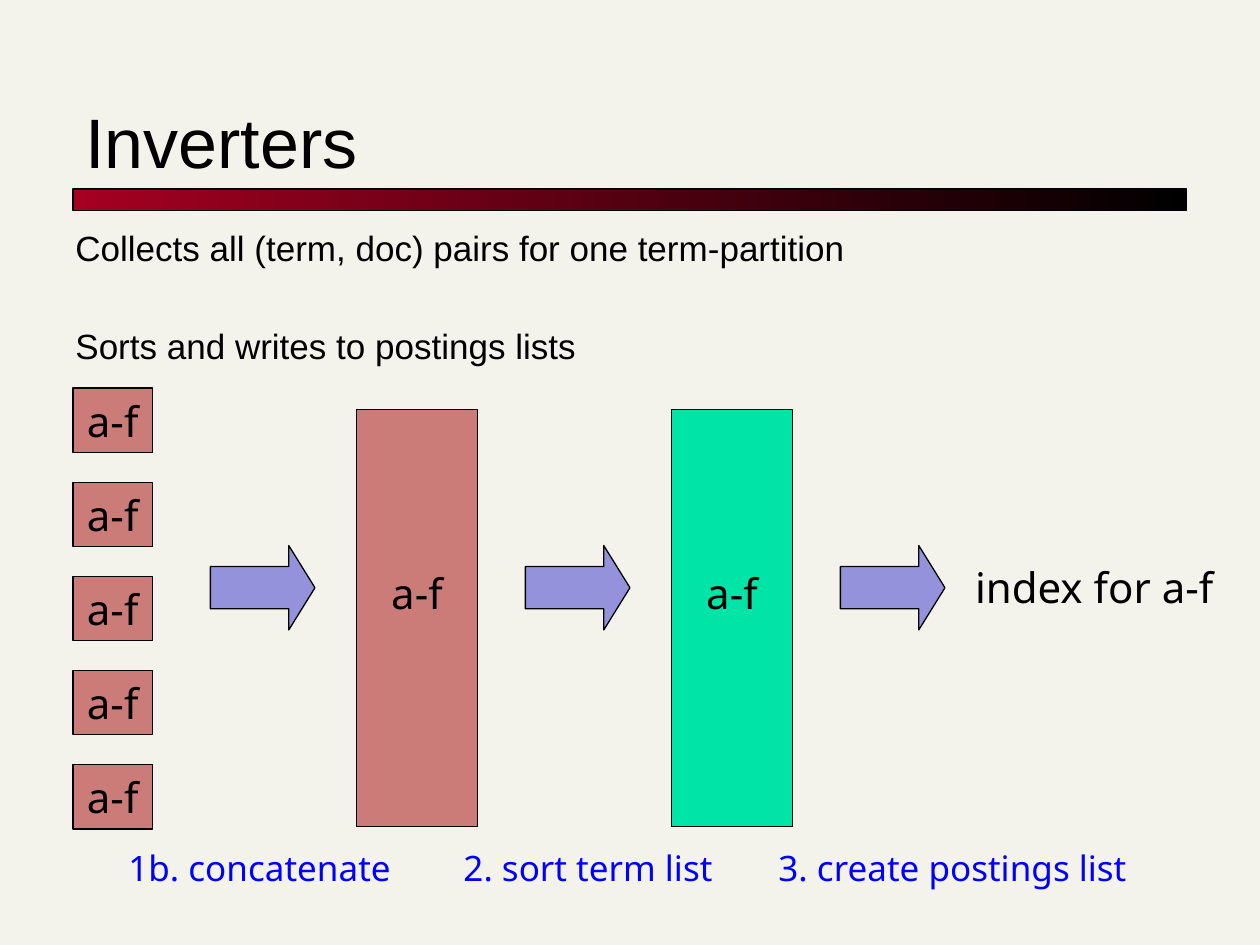
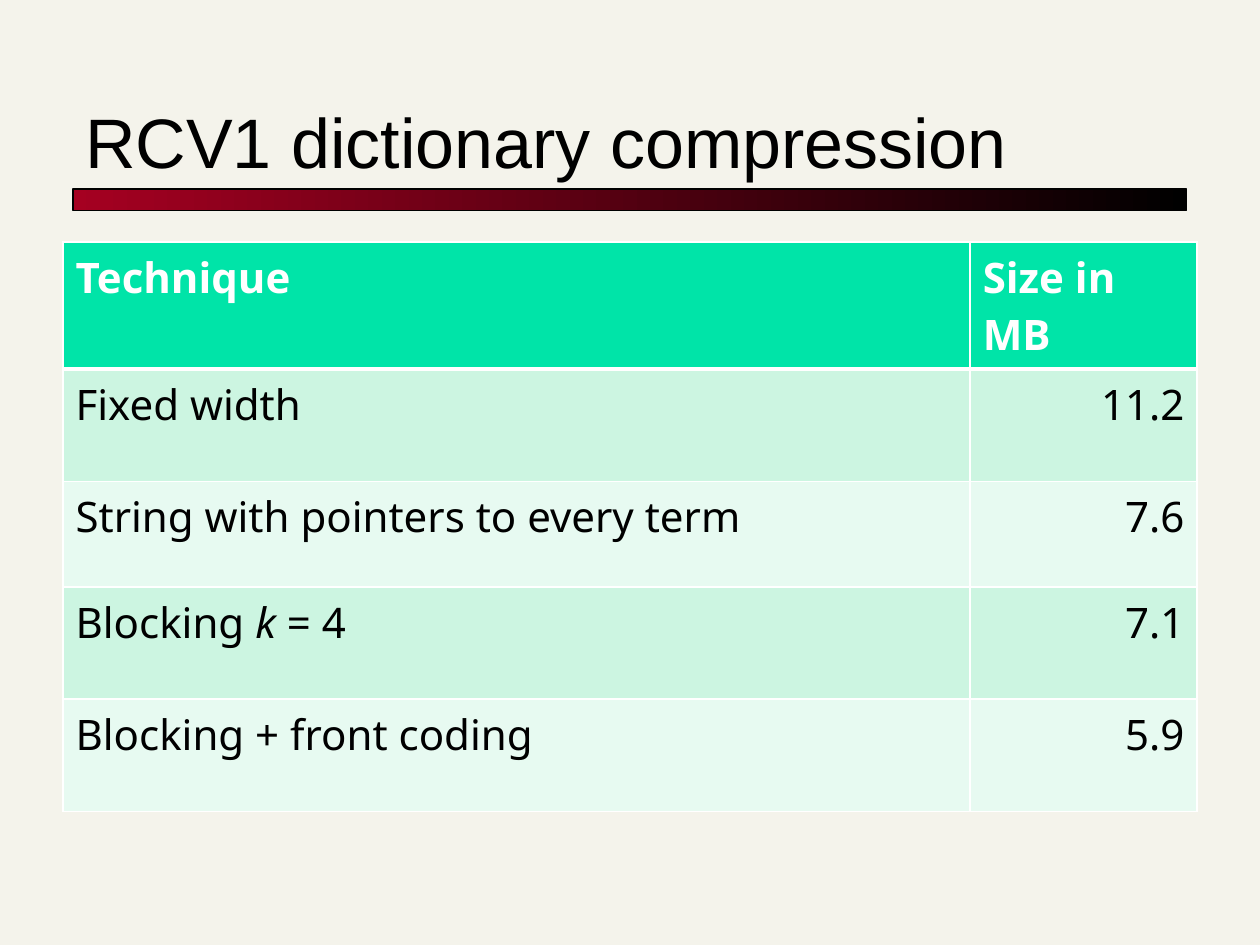
from lxml import etree
from pptx import Presentation
from pptx.dml.color import RGBColor
from pptx.enum import shapes, text
from pptx.oxml import ns
from pptx.util import Inches, Pt

COLORS = {
    "background": "F4F3EB",
    "black": "000000",
    "white": "FFFFFF",
    "crimson": "A50021",
    "rose": "CB7C79",
    "green": "00E4A8",
    "arrow": "3333CC",
    "caption": "0000FF",
    "band_dark": "CCF5E1",
    "band_light": "E7FAF1",
}
TITLE_FONT = "Arial"
DIAGRAM_FONT = "Noto Sans"
LEFT = 0.58


def rgb(name):
    return RGBColor.from_string(COLORS[name])


def format_paragraph(p, font, size, color="black", bold=False, align=text.PP_ALIGN.LEFT):
    p.alignment = align
    for r in p.runs:
        r.font.name = font
        r.font.size = Pt(size)
        r.font.bold = bold
        r.font.color.rgb = rgb(color)


def add_text(slide, box, lines, font, size, color="black", wrap=True,
             anchor=text.MSO_ANCHOR.TOP, gap=0):
    tf = slide.shapes.add_textbox(*map(Inches, box)).text_frame
    tf.word_wrap = wrap
    tf.vertical_anchor = anchor
    tf.text = "\n".join(lines)
    for i, p in enumerate(tf.paragraphs):
        format_paragraph(p, font, size, color)
        p.space_before = Pt(gap if i else 0)


def add_outlined(slide, kind, box):
    sp = slide.shapes.add_shape(kind, *map(Inches, box))
    sp.shadow.inherit = False
    sp.line.color.rgb = rgb("black")
    sp.line.width = Pt(0.75)
    return sp


def add_block(slide, box, color, label, bottom_inset=0.05, wrap=True):
    sp = add_outlined(slide, shapes.MSO_SHAPE.RECTANGLE, box)
    sp.fill.solid()
    sp.fill.fore_color.rgb = rgb(color)
    tf = sp.text_frame
    tf.word_wrap = wrap
    tf.margin_bottom = Inches(bottom_inset)
    tf.vertical_anchor = text.MSO_ANCHOR.MIDDLE
    tf.text = label
    format_paragraph(tf.paragraphs[0], DIAGRAM_FONT, 24, align=text.PP_ALIGN.CENTER)


def add_arrow(slide, left):
    sp = add_outlined(slide, shapes.MSO_SHAPE.RIGHT_ARROW, (left, 4.33, 0.83, 0.67))
    sp.adjustments[0] = 0.5
    sp.adjustments[1] = 0.31
    sp.fill.solid()
    sp.fill.fore_color.rgb = rgb("arrow")
    color = sp.fill._xPr.find(ns.qn("a:solidFill"))[0]
    etree.SubElement(color, ns.qn("a:alpha"), val="50000")


def add_titled_slide(prs, title):
    slide = prs.slides.add_slide(prs.slide_layouts[6])
    slide.background.fill.solid()
    slide.background.fill.fore_color.rgb = rgb("background")
    band = add_outlined(slide, shapes.MSO_SHAPE.RECTANGLE, (LEFT, 1.5, 8.84, 0.17))
    band.fill.gradient()
    band.fill.gradient_angle = 0
    for stop, position, color in zip(band.fill.gradient_stops, (0, 1), ("crimson", "black")):
        stop.position = position
        stop.color.rgb = rgb(color)
    add_text(slide, (LEFT, 0.42, 8.83, 1.08), [title], TITLE_FONT, 40,
             anchor=text.MSO_ANCHOR.BOTTOM)
    return slide


def set_borders(cell, top, bottom):
    tc_pr = cell._tc.get_or_add_tcPr()
    for side, width in zip("LRTB", (1, 1, top, bottom)):
        ln = etree.SubElement(tc_pr, ns.qn(f"a:ln{side}"), w=str(Pt(width)))
        fill = etree.SubElement(ln, ns.qn("a:solidFill"))
        etree.SubElement(fill, ns.qn("a:srgbClr"), val=COLORS["white"])


def fill_cell(cell, value, row, column):
    header = row == 0
    set_borders(cell, 3 if row == 1 else 1, 3 if header else 1)
    cell.fill.solid()
    band = "band_dark" if row % 2 else "band_light"
    cell.fill.fore_color.rgb = rgb("green" if header else band)
    p = cell.text_frame.paragraphs[0]
    for i, part in enumerate(value.split("*")):
        r = p.add_run()
        r.text = part
        r.font.italic = i % 2 == 1
    align = text.PP_ALIGN.RIGHT if column and not header else text.PP_ALIGN.LEFT
    format_paragraph(p, DIAGRAM_FONT, 24, "white" if header else "black", header, align)


def add_data_table(slide, left, top, widths, heights, rows):
    box = (left, top, sum(widths), sum(heights))
    table = slide.shapes.add_table(len(rows), len(widths), *map(Inches, box)).table
    for column, width in zip(table.columns, widths):
        column.width = Inches(width)
    for row, height in zip(table.rows, heights):
        row.height = Inches(height)
    for i, values in enumerate(rows):
        for j, value in enumerate(values):
            fill_cell(table.cell(i, j), value, i, j)


def build_inverters(prs):
    slide = add_titled_slide(prs, "Inverters")
    add_text(slide, (0.5, 1.75, 9.42, 1.67),
             ["Collects all (term, doc) pairs for one term-partition",
              "Sorts and writes to postings lists"], TITLE_FONT, 20, gap=32)
    first_top, last_top, count = 3.08, 6.07, 5
    step = (last_top - first_top) / (count - 1)
    for i in range(count):
        add_block(slide, (LEFT, first_top + i * step, 0.63, 0.51), "rose", "a-f", wrap=False)
    for i, color in enumerate(("rose", "green")):
        add_block(slide, (2.83 + 2.5 * i, 3.25, 0.96, 3.31), color, "a-f", bottom_inset=0.45)
    for i in range(3):
        add_arrow(slide, 1.67 + 2.5 * i)
    add_text(slide, (7.64, 4.41, 2.19, 0.5), ["index for a-f"], DIAGRAM_FONT, 24,
             wrap=False, anchor=text.MSO_ANCHOR.MIDDLE)
    for left, width, caption in ((0.92, 2.37, "1b. concatenate"),
                                 (3.58, 2.32, "2. sort term list"),
                                 (6.08, 3.14, "3. create postings list")):
        add_text(slide, (left, 6.67, width, 0.44), [caption], DIAGRAM_FONT, 20,
                 "caption", wrap=False)


def build_compression(prs):
    slide = add_titled_slide(prs, "RCV1 dictionary compression")
    add_data_table(slide, 0.5, 1.92, (7.2, 1.8), (1.01, 0.89, 0.84, 0.89, 0.89), (
        ("Technique", "Size in MB"),
        ("Fixed width", "11.2"),
        ("String with pointers to every term", "7.6"),
        ("Blocking *k* = 4", "7.1"),
        ("Blocking + front coding", "5.9"),
    ))


def main():
    prs = Presentation()
    prs.slide_width = Inches(10)
    prs.slide_height = Inches(7.5)
    build_inverters(prs)
    build_compression(prs)
    prs.save("out.pptx")


if __name__ == "__main__":
    main()
